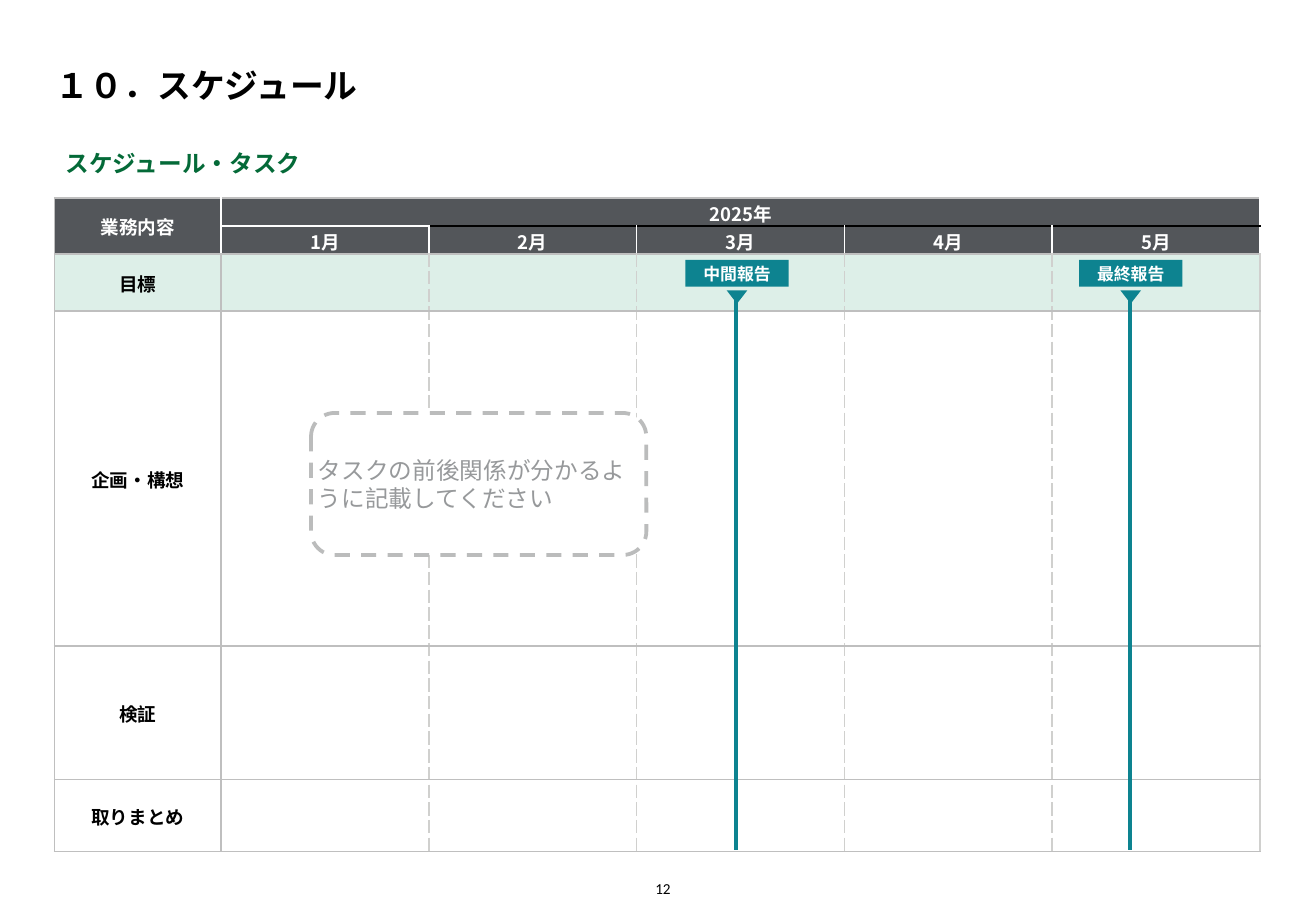
from lxml import etree
from pptx import Presentation
from pptx.dml.color import RGBColor
from pptx.enum.dml import MSO_LINE
from pptx.enum.shapes import MSO_CONNECTOR, MSO_SHAPE
from pptx.enum.text import MSO_ANCHOR as ANCHOR, PP_ALIGN as ALIGN
from pptx.oxml.ns import qn
from pptx.util import Emu, Pt

PX = 9144  # 100 px to the inch
LATIN, CJK = "Calibri", "Noto Sans CJK JP"

BLACK = RGBColor(0x00, 0x00, 0x00)
WHITE = RGBColor(0xFF, 0xFF, 0xFF)
GREEN = RGBColor(0x04, 0x6A, 0x38)
MINT = RGBColor(0xDD, 0xEF, 0xE8)
TEAL = RGBColor(0x0D, 0x83, 0x90)
HEADER = RGBColor(0x53, 0x56, 0x5A)
GRID = RGBColor(0xBF, 0xBF, 0xBF)
MONTH_LINE = RGBColor(0xD0, 0xD0, 0xCE)
NOTE_LINE = RGBColor(0xBB, 0xBC, 0xBC)
NOTE_TEXT = RGBColor(0x97, 0x99, 0x9B)

TABLE_LEFT, TABLE_TOP = 45, 163
COLS = [137] + [171] * 5
ROWS = [23, 23, 47, 276, 110, 59]
MONTHS = ["1月", "2月", "3月", "4月", "5月"]
TASKS = ["目標", "企画・構想", "検証", "取りまとめ"]
MILESTONES = [("中間報告", 606), ("最終報告", 930)]


def px(*values):
    return [Emu(v * PX) for v in values]


def write(tf, text, size=11, font=LATIN, color=BLACK, bold=False, align=ALIGN.LEFT,
          anchor=ANCHOR.MIDDLE, margins=(0, 0, 0, 0), wrap=True, spacing=None):
    tf.margin_left, tf.margin_top, tf.margin_right, tf.margin_bottom = px(*margins)
    tf.vertical_anchor = anchor
    tf.word_wrap = wrap
    p = tf.paragraphs[0]
    p.alignment = align
    if spacing:
        p.line_spacing = spacing
    r = p.add_run()
    r.text = text
    r.font.size, r.font.bold, r.font.name = Pt(size), bold, font
    r.font.color.rgb = color
    ea = etree.SubElement(r.font._element, qn("a:ea"))
    ea.set("typeface", font)


def add_text(slide, box, text, **fmt):
    write(slide.shapes.add_textbox(*px(*box)).text_frame, text, **fmt)


def add_block(slide, kind, box, fill):
    s = slide.shapes.add_shape(kind, *px(*box))
    s.shadow.inherit = False
    s.fill.solid()
    s.fill.fore_color.rgb = fill
    s.line.fill.background()
    return s


def add_border(cell, side, color, dashed=False):
    ln = etree.SubElement(cell._tc.get_or_add_tcPr(), qn(f"a:ln{side}"), w="12700")
    fill = etree.SubElement(ln, qn("a:solidFill"))
    etree.SubElement(fill, qn("a:srgbClr"), val=str(color))
    etree.SubElement(ln, qn("a:prstDash"), val="sysDash" if dashed else "solid")


def style_cell(cell, row, col):
    last = len(COLS) - 1
    if row < 2:
        left = right = WHITE
        top = GRID if row == 0 else WHITE if col < 2 else BLACK
        bottom = GRID if row == 1 or col == 0 else WHITE if col == 1 else BLACK
        if col == 0:
            left = GRID
        elif row == 0 and col == last:
            right = BLACK
        fill = HEADER
    else:
        left = GRID if col < 2 else MONTH_LINE
        right = GRID if col == 0 else MONTH_LINE
        top = bottom = GRID
        fill = MINT if row == 2 else WHITE
    add_border(cell, "L", left, row > 1 and col > 1)
    add_border(cell, "R", right, row > 1 and 0 < col < last)
    add_border(cell, "T", top)
    add_border(cell, "B", bottom)
    cell.fill.solid()
    cell.fill.fore_color.rgb = fill


def fill_cell(cell, text, color):
    write(cell.text_frame, text, font=CJK, color=color, bold=True,
          align=ALIGN.CENTER, spacing=1.06)
    cell.margin_left, cell.margin_top, cell.margin_right, cell.margin_bottom = px(4, 0, 4, 0)
    cell.vertical_anchor = ANCHOR.MIDDLE


def add_schedule(slide):
    frame = slide.shapes.add_table(len(ROWS), len(COLS), *px(
        TABLE_LEFT, TABLE_TOP, sum(COLS), sum(ROWS)))
    table = frame.table
    table.first_row = table.horz_banding = False
    for column, width in zip(table.columns, COLS):
        column.width = Emu(width * PX)
    for row, height in zip(table.rows, ROWS):
        row.height = Emu(height * PX)
    for i in range(len(ROWS)):
        for j in range(len(COLS)):
            style_cell(table.cell(i, j), i, j)
    table.cell(0, 0).merge(table.cell(1, 0))
    table.cell(0, 1).merge(table.cell(0, len(COLS) - 1))
    fill_cell(table.cell(0, 0), "業務内容", WHITE)
    fill_cell(table.cell(0, 1), "2025年", WHITE)
    for j, month in enumerate(MONTHS, 1):
        fill_cell(table.cell(1, j), month, WHITE)
    for i, task in enumerate(TASKS, 2):
        fill_cell(table.cell(i, 0), task, BLACK)


def add_milestone(slide, text, x):
    line = slide.shapes.add_connector(MSO_CONNECTOR.STRAIGHT, *px(x, 241, x, 700))
    line.line.color.rgb = TEAL
    line.line.width = Pt(2.25)
    etree.SubElement(line._element.spPr, qn("a:effectLst"))
    marker = add_block(slide, MSO_SHAPE.ISOSCELES_TRIANGLE, (x - 8, 239, 17, 11), TEAL)
    marker.rotation = 180
    label = add_block(slide, MSO_SHAPE.RECTANGLE, (x - 42, 214, 85, 22), TEAL)
    write(label.text_frame, text, size=10, font=CJK, color=WHITE, bold=True,
          align=ALIGN.CENTER, margins=(4, 4, 4, 4), wrap=False)


def add_note(slide, box, text):
    s = add_block(slide, MSO_SHAPE.ROUNDED_RECTANGLE, box, WHITE)
    s.line.color.rgb = NOTE_LINE
    s.line.width = Pt(2.25)
    s.line.dash_style = MSO_LINE.DASH
    write(s.text_frame, text, size=14, color=NOTE_TEXT)


def main():
    prs = Presentation()
    prs.slide_width, prs.slide_height = px(1083, 750)
    slide = prs.slides.add_slide(prs.slide_layouts[5])

    # Headings
    title = slide.shapes.title
    title.left, title.top, title.width, title.height = px(46, 20, 992, 67)
    write(title.text_frame, "１０．スケジュール", size=20, bold=True, anchor=ANCHOR.BOTTOM)
    add_text(slide, (46, 111, 476, 47), "スケジュール・タスク", size=14, color=GREEN,
             bold=True, margins=(8, 0, 0, 0), wrap=False)

    # Schedule with its milestones
    add_schedule(slide)
    for text, x in MILESTONES:
        add_milestone(slide, text, x)
    add_note(slide, (256, 340, 276, 117), "タスクの前後関係が分かるように記載してください")

    # Page number
    add_text(slide, (532, 720, 20, 19), "12", size=9, align=ALIGN.RIGHT,
             anchor=ANCHOR.BOTTOM, wrap=False)
    prs.save("out.pptx")


if __name__ == "__main__":
    main()
